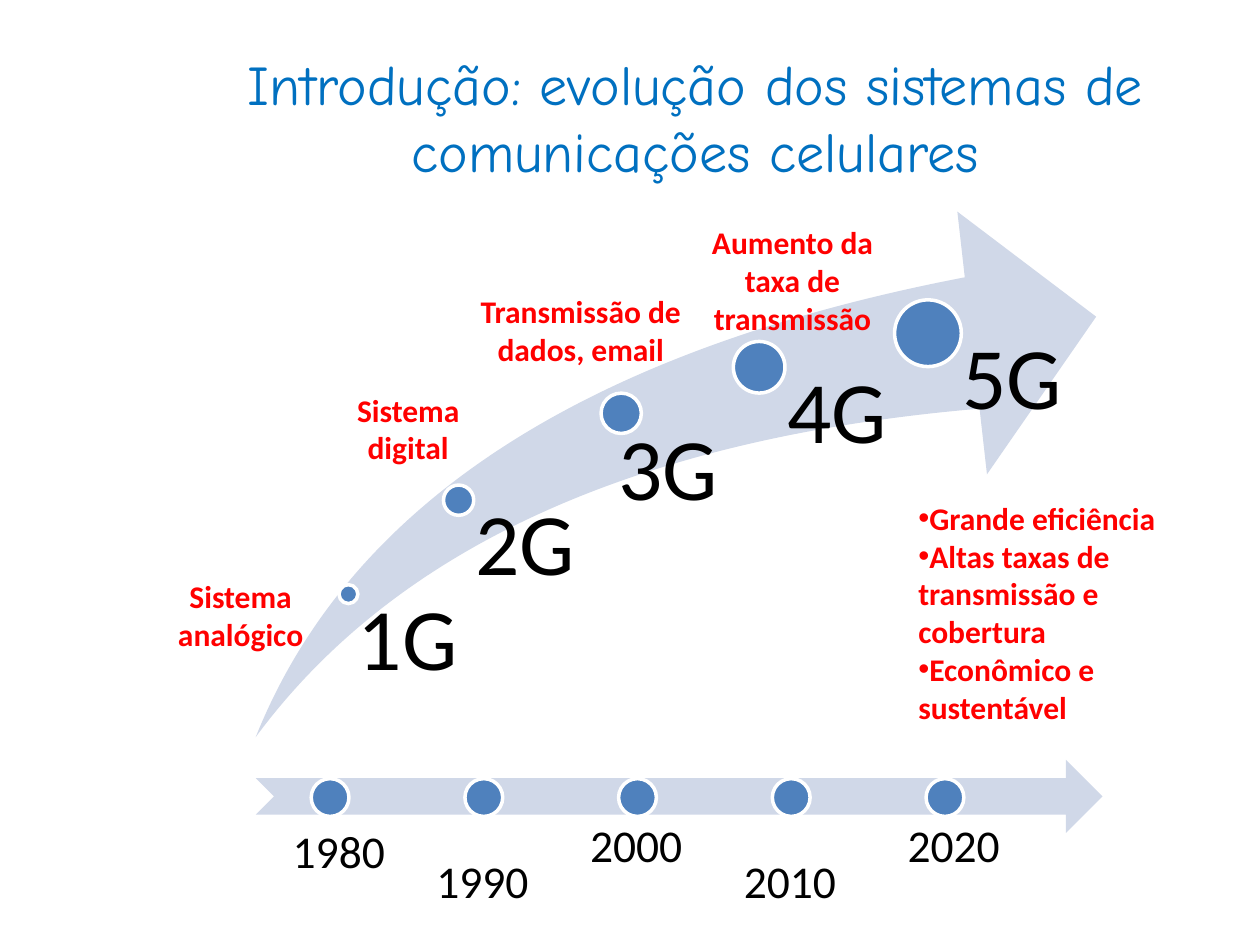
from lxml import etree
from pptx import Presentation
from pptx.dml.color import RGBColor
from pptx.enum.shapes import MSO_SHAPE as Shape
from pptx.enum.text import MSO_ANCHOR as Anchor, MSO_AUTO_SIZE as AutoSize, PP_ALIGN as Align
from pptx.oxml.ns import qn
from pptx.util import Inches, Pt

COLORS = {
    "title": "0070C0",
    "arrow": "D0D8E8",
    "dot": "4F81BD",
    "outline": "FFFFFF",
    "text": "000000",
    "note": "FF0000",
}

# name, dot left, dot top, dot size, then label left, top, width, height, left inset
GENERATIONS = [
    ("1G", 2.69, 4.64, 0.15, 2.76, 4.72, 0.92, 0.99, 0.08),
    ("2G", 3.52, 3.85, 0.24, 3.64, 3.97, 1.11, 1.75, 0.13),
    ("3G", 4.77, 3.12, 0.32, 4.74, 3.37, 1.29, 2.34, 0.17),
    ("4G", 5.82, 2.71, 0.41, 6.03, 2.92, 1.33, 2.79, 0.22),
    ("5G", 7.1, 2.38, 0.53, 7.36, 2.65, 1.33, 3.07, 0.28),
]

# year, label left, top, height, anchor
YEARS = [
    ("1980", 2.11, 5.99, 1.18, Anchor.BOTTOM),
    ("1990", 3.25, 6.62, 0.85, Anchor.TOP),
    ("2000", 4.47, 5.94, 1.18, Anchor.BOTTOM),
    ("2010", 5.69, 6.62, 0.85, Anchor.TOP),
    ("2020", 6.99, 5.94, 1.18, Anchor.BOTTOM),
]
YEAR_DOT_LEFT, YEAR_DOT_STEP = 2.47, 1.22

NOTES = [
    ("Sistema analógico", 1.09, 4.53, 1.64, 0.71),
    ("Sistema digital", 2.42, 3.05, 1.64, 0.71),
    ("Transmissão de dados, email", 3.67, 2.27, 1.88, 0.71),
    ("Aumento da taxa de transmissão", 5.47, 1.72, 1.64, 1.01),
]
BENEFITS = [
    "Grande eficiência",
    "Altas taxas de transmissão e cobertura",
    "Econômico e sustentável",
]


def add_bullet(paragraph):
    properties = paragraph._p.get_or_add_pPr()
    etree.SubElement(properties, qn("a:buFont"), typeface="Arial")
    etree.SubElement(properties, qn("a:buChar"), char="•")


def add_text(slide, lines, left, top, width, height, *, size, color="text",
             font="Calibri", bold=False, align=Align.LEFT, anchor=Anchor.TOP,
             insets=(0.1, 0.05, 0.1, 0.05), line_spacing=None, bullets=False, grow=False):
    """Add a text box; insets are left, top, right, bottom in inches."""
    box = slide.shapes.add_textbox(Inches(left), Inches(top), Inches(width), Inches(height))
    frame = box.text_frame
    frame.word_wrap = True
    frame.auto_size = AutoSize.SHAPE_TO_FIT_TEXT if grow else AutoSize.NONE
    frame.vertical_anchor = anchor
    (frame.margin_left, frame.margin_top,
     frame.margin_right, frame.margin_bottom) = map(Inches, insets)
    frame.text = "\n".join(lines)
    for paragraph in frame.paragraphs:
        paragraph.alignment = align
        if line_spacing:
            paragraph.line_spacing = line_spacing
        if bullets:
            add_bullet(paragraph)
        paragraph.font.name = font
        paragraph.font.size = Pt(size)
        paragraph.font.bold = bold
        paragraph.font.color.rgb = RGBColor.from_string(COLORS[color])


def add_filled_shape(slide, kind, left, top, width, height, color):
    shape = slide.shapes.add_shape(kind, Inches(left), Inches(top), Inches(width), Inches(height))
    shape.shadow.inherit = False
    shape.fill.solid()
    shape.fill.fore_color.rgb = RGBColor.from_string(COLORS[color])
    shape.line.fill.background()
    return shape


def add_dot(slide, left, top, size):
    dot = add_filled_shape(slide, Shape.OVAL, left, top, size, size, "dot")
    dot.line.color.rgb = RGBColor.from_string(COLORS["outline"])
    dot.line.width = Pt(2)


def add_generations(slide):
    arrow = add_filled_shape(slide, Shape.SWOOSH_ARROW, 2.03, 1.68, 6.67, 4.17, "arrow")
    arrow.adjustments[0] = 0.25
    arrow.adjustments[1] = 0.25
    for name, dot_left, dot_top, dot_size, left, top, width, height, inset in GENERATIONS:
        add_dot(slide, dot_left, dot_top, dot_size)
        add_text(slide, [name], left, top, width, height, size=50,
                 insets=(inset, 0, 0, 0), line_spacing=0.9)


def add_timeline(slide):
    add_filled_shape(slide, Shape.NOTCHED_RIGHT_ARROW, 2.03, 6.03, 6.72, 0.58, "arrow")
    for index, (year, left, top, height, anchor) in enumerate(YEARS):
        add_text(slide, [year], left, top, 1.16, height, size=26, align=Align.CENTER,
                 anchor=anchor, insets=(0.2,) * 4, line_spacing=0.9)
        add_dot(slide, YEAR_DOT_LEFT + index * YEAR_DOT_STEP, 6.18, 0.3)


def add_notes(slide):
    note_format = {"size": 18, "color": "note", "bold": True, "grow": True}
    for text, *position in NOTES:
        add_text(slide, [text], *position, align=Align.CENTER, **note_format)
    add_text(slide, BENEFITS, 7.19, 3.91, 2.27, 2.22, bullets=True, **note_format)


def main():
    presentation = Presentation()
    presentation.slide_width = Inches(10)
    presentation.slide_height = Inches(7.5)
    slide = presentation.slides.add_slide(presentation.slide_layouts[6])
    add_text(slide, ["Introdução: evolução dos sistemas de comunicações celulares"],
             1.54, 0.3, 7.96, 1.25, size=32, color="title", font="Comic Neue",
             align=Align.CENTER, anchor=Anchor.MIDDLE)
    add_generations(slide)
    add_timeline(slide)
    add_notes(slide)
    presentation.save("out.pptx")


if __name__ == "__main__":
    main()
